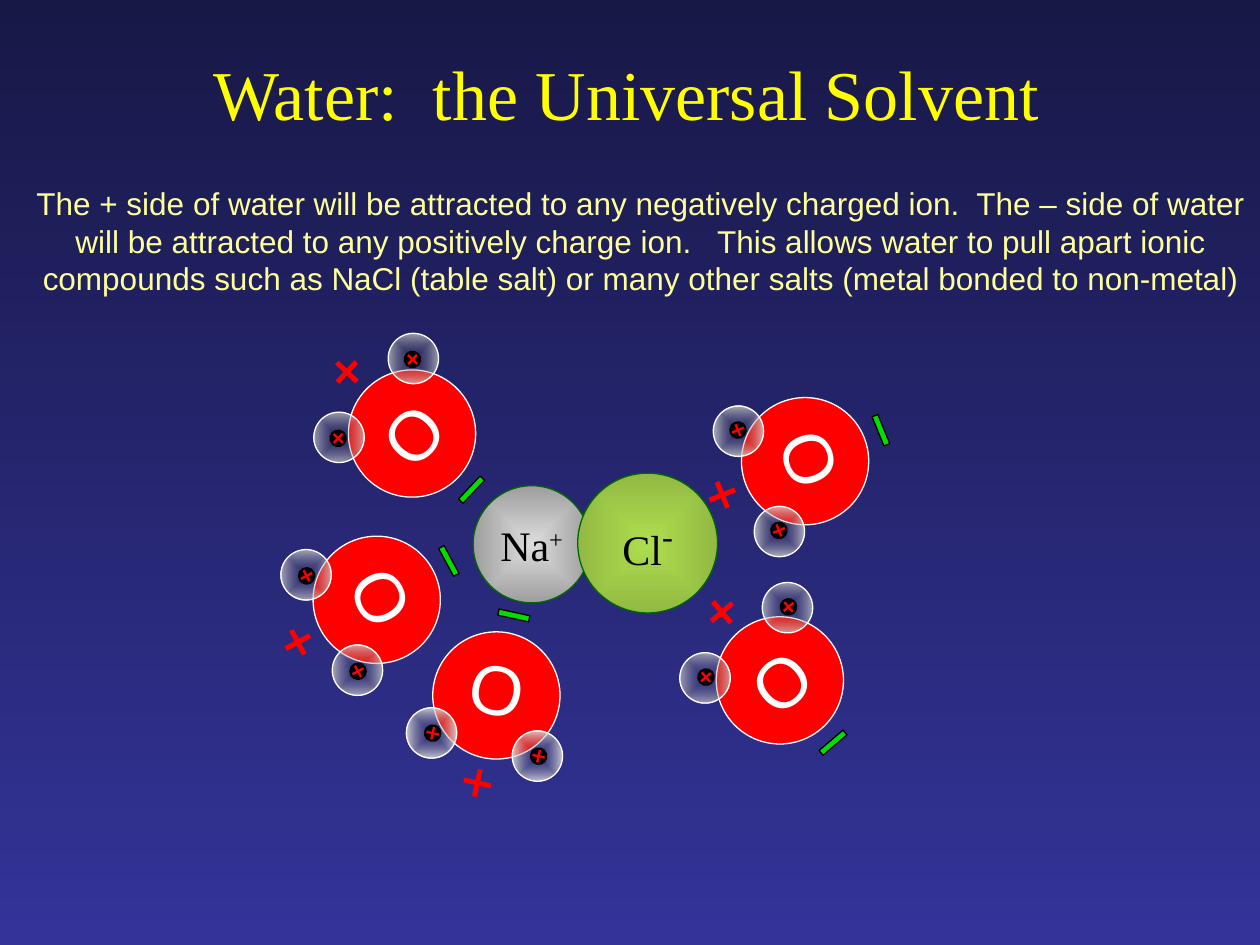
import math
from lxml import etree
from pptx import Presentation
from pptx import util as u
from pptx.dml.color import RGBColor
from pptx.enum import shapes, text
from pptx.oxml.ns import qn

TITLE = "Water:  the Universal Solvent"
EXPLANATION = (
    "The + side of water will be attracted to any negatively charged ion.  "
    "The – side of water will be attracted to any positively charge ion.   "
    "This allows water to pull apart ionic compounds such as NaCl (table salt) "
    "or many other salts (metal bonded to non-metal)"
)
SERIF, SANS = "Times New Roman", "Arial"
RED, WHITE, BLACK, GREEN, DARK_GREEN = "FF0000", "FFFFFF", "000000", "00E000", "006600"

IONS = [
    {"center": (4.22, 4.32), "size": 0.93, "glow": ("DDDDDD", "9E9E9E"),
     "symbol": "Na", "charge": "+", "charge_size": 24},
    {"center": (5.14, 4.31), "size": 1.11, "glow": ("AEDD4F", "92B942"),
     "symbol": "Cl", "charge": "-", "charge_size": 32},
]
WATERS_BEHIND = [
    {"center": (6.19, 5.4), "angle": 319.6, "flipped": False},
    {"center": (3.94, 5.52), "angle": 12.3, "flipped": True},
]
WATERS_IN_FRONT = [
    {"center": (2.99, 4.76), "angle": 61.7, "flipped": True},
    {"center": (6.39, 3.66), "angle": 247.8, "flipped": False},
    {"center": (3.27, 3.44), "angle": 133.3, "flipped": True},
]

OVAL, CROSS, BAR = (shapes.MSO_SHAPE.OVAL, shapes.MSO_SHAPE.CROSS,
                    shapes.MSO_SHAPE.RECTANGLE)
HYDROGEN = {"kind": OVAL, "size": (0.4, 0.4), "glow": ("666666", WHITE), "line": WHITE}
NUCLEUS = {"kind": OVAL, "size": (0.14, 0.14), "fill": BLACK}
PROTON = {"kind": CROSS, "size": (0.1, 0.1), "fill": RED}
WATER_PARTS = [
    ((0, 0), {"kind": OVAL, "size": (1.01, 1.01), "fill": RED, "line": WHITE}),
    ((0.42, -0.4), HYDROGEN),
    ((-0.44, -0.4), HYDROGEN),
    ((-0.43, -0.4), NUCLEUS),
    ((-0.43, -0.4), PROTON),
    ((0.43, -0.4), NUCLEUS),
    ((0.43, -0.4), PROTON),
    ((0, -0.71), {"kind": CROSS, "size": (0.22, 0.22), "fill": RED}),
    ((0, 0.65), {"kind": BAR, "size": (0.25, 0.05), "fill": GREEN, "line": BLACK}),
]


def color(value):
    return RGBColor.from_string(value)


def style(run, size, font, ink):
    run.font.size = u.Pt(size)
    run.font.name = font
    run.font.color.rgb = color(ink)


def set_gradient(fill, colors):
    fill.gradient()
    for stop, value in zip(fill.gradient_stops, colors):
        stop.color.rgb = color(value)


def glow_from_center(part, colors, clear_center):
    set_gradient(part.fill, colors)
    gradient = part.element.spPr.find(qn("a:gradFill"))
    linear = gradient.find(qn("a:lin"))
    radial = etree.Element(qn("a:path"), {"path": "shape"})
    sides = dict.fromkeys("ltrb", "50000")
    etree.SubElement(radial, qn("a:fillToRect"), sides)
    gradient.replace(linear, radial)
    if clear_center:
        inner = next(gradient.iter(qn("a:srgbClr")))
        etree.SubElement(inner, qn("a:alpha"), {"val": "0"})


def add_part(parent, center, kind, size, fill=None, glow=None, line=None,
             clear_center=True):
    (x, y), (width, height) = center, size
    part = parent.shapes.add_shape(
        kind, u.Inches(x - width / 2), u.Inches(y - height / 2),
        u.Inches(width), u.Inches(height))
    part.shadow.inherit = False
    if kind == CROSS:
        part.adjustments[0] = 0.409
    if glow:
        glow_from_center(part, glow, clear_center)
    else:
        part.fill.solid()
        part.fill.fore_color.rgb = color(fill)
    if line:
        part.line.color.rgb = color(line)
        part.line.width = u.Pt(0.75)
    else:
        part.line.fill.background()
    return part


def label(part, symbol, size, font, ink):
    frame = part.text_frame
    frame.text = symbol
    frame.word_wrap = False
    frame.vertical_anchor = text.MSO_ANCHOR.MIDDLE
    frame.paragraphs[0].alignment = text.PP_ALIGN.CENTER
    style(frame.paragraphs[0].runs[0], size, font, ink)


def add_water(slide, center, angle, flipped):
    molecule = slide.shapes.add_group_shape()
    cos, sin = math.cos(math.radians(angle)), math.sin(math.radians(angle))
    for (dx, dy), look in WATER_PARTS:
        if flipped:
            dy = -dy
        spot = (center[0] + dx * cos - dy * sin, center[1] + dx * sin + dy * cos)
        part = add_part(molecule, spot, **look)
        part.rotation = angle
        if flipped:
            part.element.spPr.xfrm.set("flipV", "1")
        if (dx, dy) == (0, 0):
            label(part, "O", 40, SANS, WHITE)


def add_ion(slide, center, size, glow, symbol, charge, charge_size):
    ion = add_part(slide, center, OVAL, (size, size), glow=glow,
                   line=DARK_GREEN, clear_center=False)
    label(ion, symbol, 24, SERIF, BLACK)
    superscript = ion.text_frame.paragraphs[0].add_run()
    superscript.text = charge
    style(superscript, charge_size, SERIF, BLACK)
    superscript.font._element.set("baseline", "30000")


def place(part, left, top, width, height):
    part.left, part.top = u.Inches(left), u.Inches(top)
    part.width, part.height = u.Inches(width), u.Inches(height)


def main():
    deck = Presentation()
    deck.slide_width, deck.slide_height = u.Inches(10), u.Inches(7.5)
    slide = deck.slides.add_slide(deck.slide_layouts[5])
    set_gradient(slide.background.fill, ("181847", "333399"))
    slide.background.fill.gradient_angle = 270

    title = slide.shapes.title
    place(title, 0.72, 0.36, 8.5, 0.75)
    label(title, TITLE, 40, SERIF, "FFFF00")
    title.text_frame.word_wrap = True

    for water in WATERS_BEHIND:
        add_water(slide, **water)
    for ion in IONS:
        add_ion(slide, **ion)
    for water in WATERS_IN_FRONT:
        add_water(slide, **water)

    explanation = slide.shapes.add_textbox(0, 0, 0, 0)
    place(explanation, 0.17, 1.41, 9.83, 1.01)
    label(explanation, EXPLANATION, 18, SANS, "FFFF99")
    explanation.text_frame.word_wrap = True
    explanation.text_frame.vertical_anchor = text.MSO_ANCHOR.TOP

    deck.save("out.pptx")


if __name__ == "__main__":
    main()
